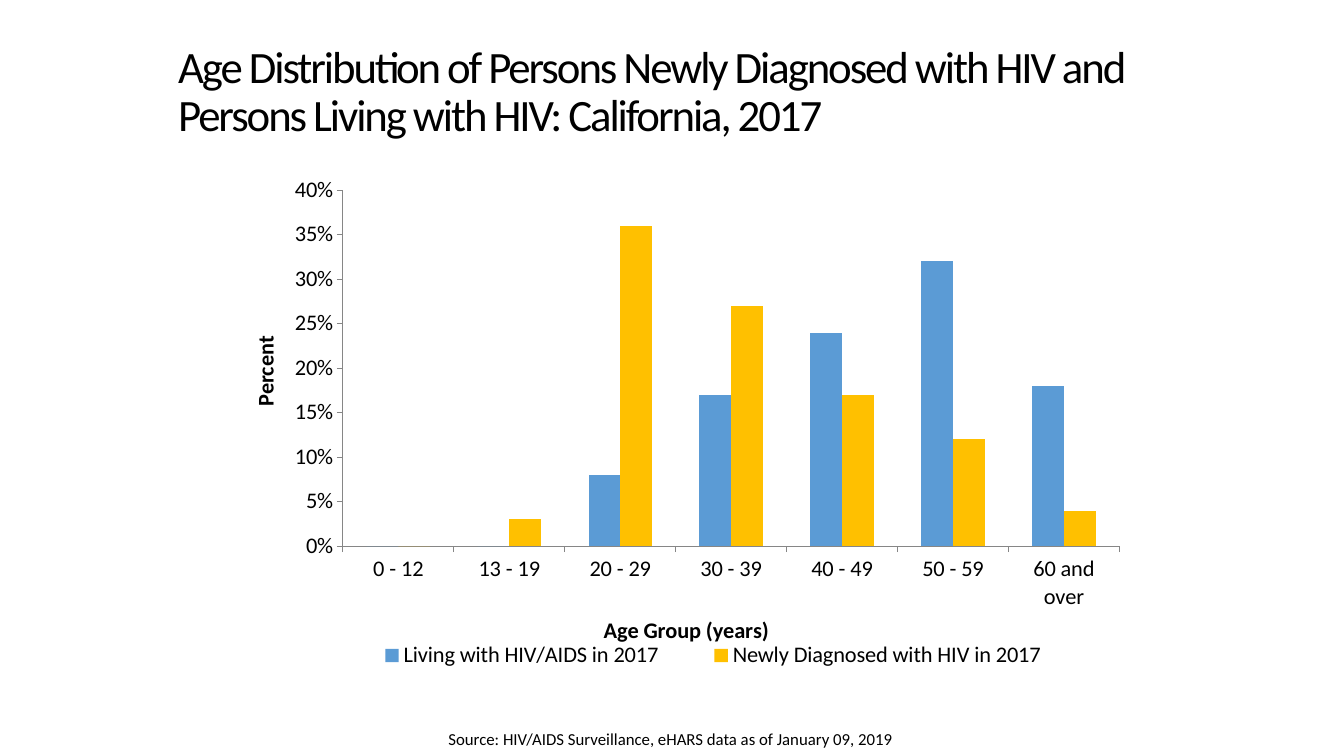
from dataclasses import dataclass

from lxml.etree import SubElement
from pptx import Presentation
from pptx.chart.chart import Chart
from pptx.chart.data import CategoryChartData
from pptx.dml.color import RGBColor
from pptx.enum.chart import XL_CHART_TYPE, XL_LEGEND_POSITION, XL_TICK_MARK
from pptx.enum.text import MSO_ANCHOR
from pptx.oxml.ns import qn
from pptx.slide import Slide
from pptx.util import Cm, Pt

FONT = "Calibri"
BLACK = "000000"
AXIS_GRAY = "868686"
AGE_GROUPS = ("0 - 12", "13 - 19", "20 - 29", "30 - 39", "40 - 49", "50 - 59", "60 and over")


@dataclass
class TextBlock:
    text: str
    left: float
    top: float
    width: float
    height: float
    size: int
    anchor: MSO_ANCHOR = MSO_ANCHOR.TOP
    line_spacing: float = 1.0
    letter_spacing: int = 0


@dataclass
class AgeSeries:
    name: str
    shares: tuple[float, ...]
    color: str


@dataclass
class AxisStyle:
    name: str
    title: str
    rotation: int
    title_left: float
    title_top: float


TEXT_BLOCKS = (
    TextBlock("Age Distribution of Persons Newly Diagnosed with HIV and "
              "Persons Living with HIV: California, 2017",
              4.24, 0.76, 25.25, 3.18, 32, MSO_ANCHOR.MIDDLE, 0.9, -150),
    TextBlock("Source: HIV/AIDS Surveillance, eHARS data as of January 09, 2019",
              11.05, 18.24, 13.94, 0.76, 12),
)
SERIES = (
    AgeSeries("Living with HIV/AIDS in 2017", (0, 0, 0.08, 0.17, 0.24, 0.32, 0.18), "5B9BD5"),
    AgeSeries("Newly Diagnosed with HIV in 2017", (0, 0.03, 0.36, 0.27, 0.17, 0.12, 0.04), "FFC000"),
)
AXES = (
    AxisStyle("category_axis", "Age Group (years)", 0, 0.42, 0.87),
    AxisStyle("value_axis", "Percent", -90, 0.03, 0.31),
)


def rgb(color: str) -> RGBColor:
    return RGBColor.from_string(color)


def style_font(font, size: int, bold: bool = False) -> None:
    font.name = FONT
    font.size = Pt(size)
    font.bold = bold
    font.color.rgb = rgb(BLACK)


def add_text(slide: Slide, block: TextBlock) -> None:
    shape = slide.shapes.add_textbox(Cm(block.left), Cm(block.top), Cm(block.width), Cm(block.height))
    text_frame = shape.text_frame
    text_frame.word_wrap = True
    text_frame.vertical_anchor = block.anchor
    text_frame.text = block.text
    paragraph = text_frame.paragraphs[0]
    paragraph.line_spacing = block.line_spacing
    font = paragraph.runs[0].font
    style_font(font, block.size)
    if block.letter_spacing:
        paragraph.runs[0].font.color.rgb = rgb(BLACK)
        run_properties = shape.element.xpath(".//a:rPr")[0]
        run_properties.set("spc", str(block.letter_spacing))


def place(element, index: int, **layout_values) -> None:
    """Give a chart part a manual layout, as fractions of the chart, at a child index."""
    for existing in element.findall(qn("c:layout")):
        element.remove(existing)
    layout = SubElement(element, qn("c:layout"))
    element.insert(index, layout)
    manual = SubElement(layout, qn("c:manualLayout"))
    for tag, value in layout_values.items():
        SubElement(manual, qn(f"c:{tag}")).set("val", str(value))


def style_axis(chart: Chart, style: AxisStyle) -> None:
    axis = getattr(chart, style.name)
    axis.has_major_gridlines = False
    axis.major_tick_mark = XL_TICK_MARK.OUTSIDE
    axis.minor_tick_mark = XL_TICK_MARK.NONE
    axis.format.line.color.rgb = rgb(AXIS_GRAY)
    axis.format.line.width = Pt(0.75)
    style_font(axis.tick_labels.font, 16)

    text_frame = axis.axis_title.text_frame
    text_frame.text = style.title
    style_font(text_frame.paragraphs[0].runs[0].font, 16, bold=True)
    title = chart.element.xpath(".//c:title")[-1]
    title.xpath(".//a:bodyPr")[0].set("rot", str(style.rotation * 60000))
    place(title, 1, xMode="edge", yMode="edge", x=style.title_left, y=style.title_top)


def add_age_chart(slide: Slide) -> None:
    chart_data = CategoryChartData(number_format="0%")
    chart_data.categories = AGE_GROUPS
    for series in SERIES:
        chart_data.add_series(series.name, series.shares)
    chart = slide.shapes.add_chart(XL_CHART_TYPE.COLUMN_CLUSTERED, Cm(5.51), Cm(4.45),
                                   Cm(22.86), Cm(12.57), chart_data).chart
    chart.has_title = False
    style_font(chart.font, 10)

    plot = chart.plots[0]
    plot.gap_width = 150
    plot.overlap = 0
    plot.vary_by_categories = False
    for drawn, series in zip(plot.series, SERIES):
        drawn.format.fill.solid()
        drawn.format.fill.fore_color.rgb = rgb(series.color)

    for style in AXES:
        style_axis(chart, style)
    value_axis = chart.value_axis
    value_axis.minimum_scale = 0
    value_axis.maximum_scale = 0.4
    value_axis.major_unit = 0.05
    value_axis.tick_labels.number_format = "0%"
    value_axis.tick_labels.number_format_is_linked = False

    chart.has_legend = True
    chart.legend.position = XL_LEGEND_POSITION.BOTTOM
    chart.legend.include_in_layout = False
    style_font(chart.legend.font, 16)
    place(chart.element.xpath(".//c:legend")[0], 1,
          xMode="edge", yMode="edge", x=0.13, y=0.93, w=0.83, h=0.07)
    place(chart.element.xpath(".//c:plotArea")[0], 0, layoutTarget="inner",
          xMode="edge", yMode="edge", x=0.137, y=0.024, w=0.856, h=0.716)


def main() -> None:
    presentation = Presentation()
    presentation.slide_width = Cm(33.87)
    presentation.slide_height = Cm(19.05)
    slide = presentation.slides.add_slide(presentation.slide_layouts[6])
    add_age_chart(slide)
    for block in TEXT_BLOCKS:
        add_text(slide, block)
    presentation.save("out.pptx")


if __name__ == "__main__":
    main()
